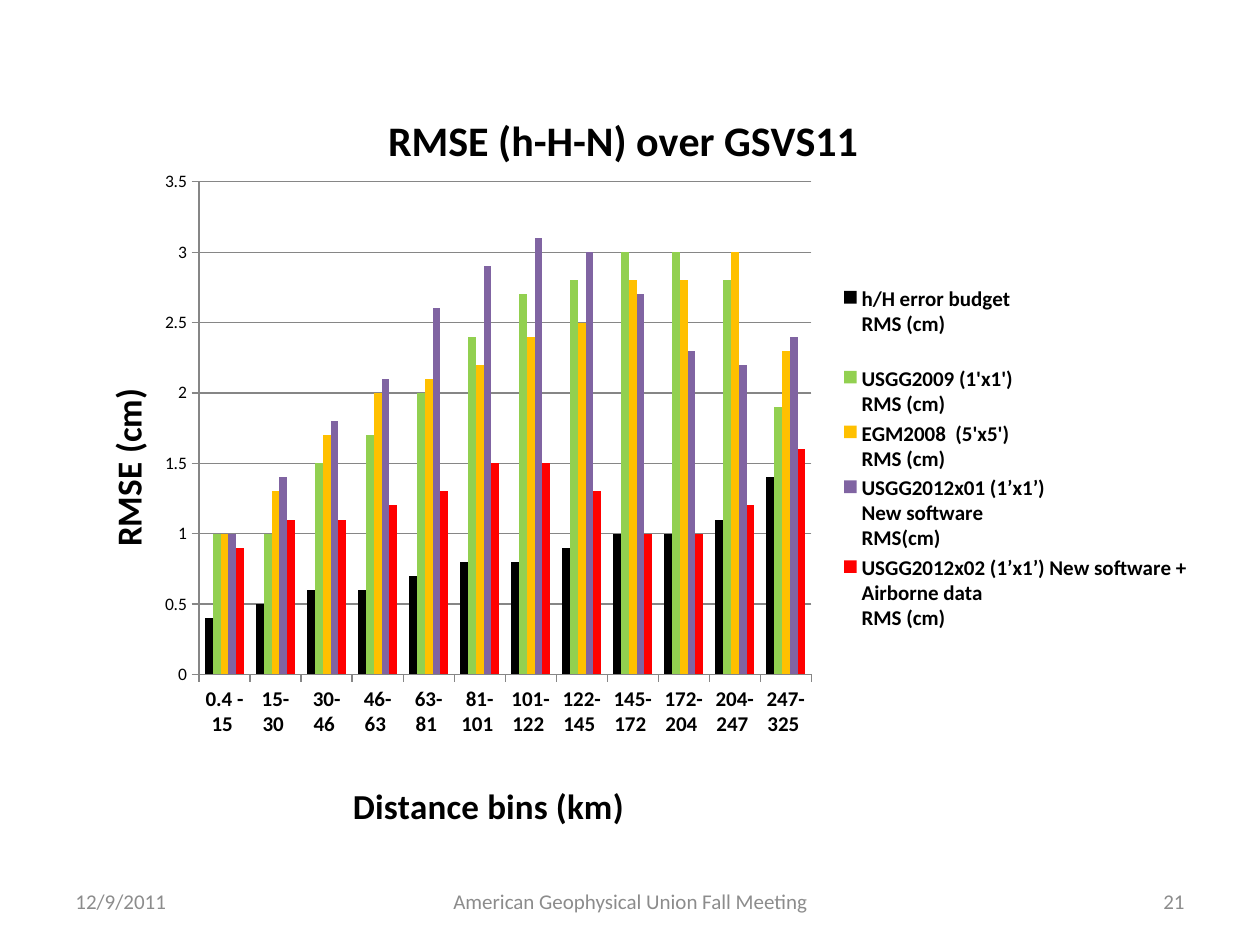
import pptx
import pptx.chart.data
import pptx.dml.color
import pptx.enum.chart
import pptx.enum.text
import pptx.oxml
import pptx.oxml.ns
import pptx.util

PX = 914400 // 126
HUES = {"black": "000000", "green": "92D050", "gold": "FFC000", "plum": "8064A2",
        "red": "FF0000", "line": "868686", "foot": "8C8C8C"}
AREA = (63, 74, 1134, 770)


def style(font, size, hue, bold=False):
    font.name = "Calibri"
    font.size = pptx.util.Pt(size)
    font.bold = bold
    font.color.rgb = pptx.dml.color.RGBColor.from_string(HUES[hue])


def place(node, left, top, width=None, height=None, inner=False):
    qn = pptx.oxml.ns.qn
    old = node.find(qn("c:layout"))
    if old is not None:
        node.remove(old)
    x, y, w, h = AREA
    parts = [("xMode", "edge"), ("yMode", "edge"),
             ("x", round((left - x) / w, 2)), ("y", round((top - y) / h, 2))]
    if inner:
        parts.insert(0, ("layoutTarget", "inner"))
    if width:
        parts += [("w", round(width / w, 2)), ("h", round(height / h, 2))]
    body = "".join(f'<c:{tag} val="{val}"/>' for tag, val in parts)
    layout = pptx.oxml.parse_xml(
        f'<c:layout {pptx.oxml.ns.nsdecls("c")}><c:manualLayout>{body}</c:manualLayout></c:layout>')
    over = node.find(qn("c:overlay"))
    if over is None:
        node.insert(0, layout)
    else:
        over.addprevious(layout)


deck = pptx.Presentation()
deck.slide_width = 1260 * PX
deck.slide_height = 945 * PX
slide = deck.slides.add_slide(deck.slide_layouts[6])

ALIGN = pptx.enum.text.PP_ALIGN
for text, left, width, align in [
    ("12/9/2011", 63, 294, ALIGN.LEFT),
    ("American Geophysical Union Fall Meeting", 431, 399, ALIGN.CENTER),
    ("21", 903, 294, ALIGN.RIGHT),
]:
    frame = slide.shapes.add_textbox(left * PX, 876 * PX, width * PX, 50 * PX).text_frame
    frame.word_wrap = True
    frame.vertical_anchor = pptx.enum.text.MSO_ANCHOR.MIDDLE
    para = frame.paragraphs[0]
    para.alignment = align
    run = para.add_run()
    run.text = text
    style(run.font, 12, "foot")

data = pptx.chart.data.CategoryChartData()
data.categories = ["0.4 - 15 ", "15-30 ", "30-46 ", "46-63 ", "63-81 ", "81-101 ", "101-122 ",
                   "122-145 ", "145-172 ", "172-204 ", "204-247 ", "247-325 "]
SERIES = [
    ("h/H error budget \nRMS (cm)\n ", "black",
     [0.4, 0.5, 0.6, 0.6, 0.7, 0.8, 0.8, 0.9, 1, 1, 1.1, 1.4]),
    ("USGG2009 (1'x1')\nRMS (cm)", "green",
     [1, 1, 1.5, 1.7, 2, 2.4, 2.7, 2.8, 3, 3, 2.8, 1.9]),
    ("EGM2008  (5'x5')\nRMS (cm)", "gold",
     [1, 1.3, 1.7, 2, 2.1, 2.2, 2.4, 2.5, 2.8, 2.8, 3, 2.3]),
    ("USGG2012x01 (1’x1’) \nNew software\nRMS(cm)", "plum",
     [1, 1.4, 1.8, 2.1, 2.6, 2.9, 3.1, 3, 2.7, 2.3, 2.2, 2.4]),
    ("USGG2012x02 (1’x1’) New software + Airborne data \nRMS (cm)", "red",
     [0.9, 1.1, 1.1, 1.2, 1.3, 1.5, 1.5, 1.3, 1, 1, 1.2, 1.6]),
]
for name, hue, vals in SERIES:
    data.add_series(name, vals)

ENUM = pptx.enum.chart
chart = slide.shapes.add_chart(
    ENUM.XL_CHART_TYPE.COLUMN_CLUSTERED, *[n * PX for n in AREA], data).chart
style(chart.font, 10, "black")
plot = chart.plots[0]
plot.gap_width = 150
plot.overlap = 0
plot.vary_by_categories = False
for item, (name, hue, vals) in zip(plot.series, SERIES):
    item.invert_if_negative = False
    item.format.fill.solid()
    item.format.fill.fore_color.rgb = pptx.dml.color.RGBColor.from_string(HUES[hue])

cat = chart.category_axis
val = chart.value_axis
style(cat.tick_labels.font, 12, "black", True)
style(val.tick_labels.font, 10, "black")
val.minimum_scale = 0
val.maximum_scale = 3.5
val.major_unit = 0.5
val.has_major_gridlines = True
for axis in (cat, val):
    axis.major_tick_mark = ENUM.XL_TICK_MARK.OUTSIDE
    axis.minor_tick_mark = ENUM.XL_TICK_MARK.NONE
for part in (cat, val, val.major_gridlines):
    part.format.line.width = pptx.util.Pt(0.75)
    part.format.line.color.rgb = pptx.dml.color.RGBColor.from_string(HUES["line"])

for owner, text, size, left, top in [
    (chart, "RMSE (h-H-N) over GSVS11  ", 24, 385, 105),
    (cat, "Distance bins (km)", 20, 350, 771),
    (val, "RMSE (cm)", 20, 97, 380),
]:
    owner.has_title = True
    title = owner.chart_title if owner is chart else owner.axis_title
    run = title.text_frame.paragraphs[0].add_run()
    run.text = text
    style(run.font, size, "black", True)
    node = title.text_frame._txBody.getparent().getparent()
    place(node, left, top)
    if owner is val:
        title.text_frame._txBody.bodyPr.set("rot", "-5400000")
        title.text_frame._txBody.bodyPr.set("vert", "horz")

chart.has_legend = True
key = chart.legend
key.position = ENUM.XL_LEGEND_POSITION.RIGHT
key.include_in_layout = False
style(key.font, 12, "black", True)
place(key._element, 830, 282, 367, 354)
place(chart._chartSpace.chart.plotArea, 198, 185, 609, 496, True)

deck.save("out.pptx")
